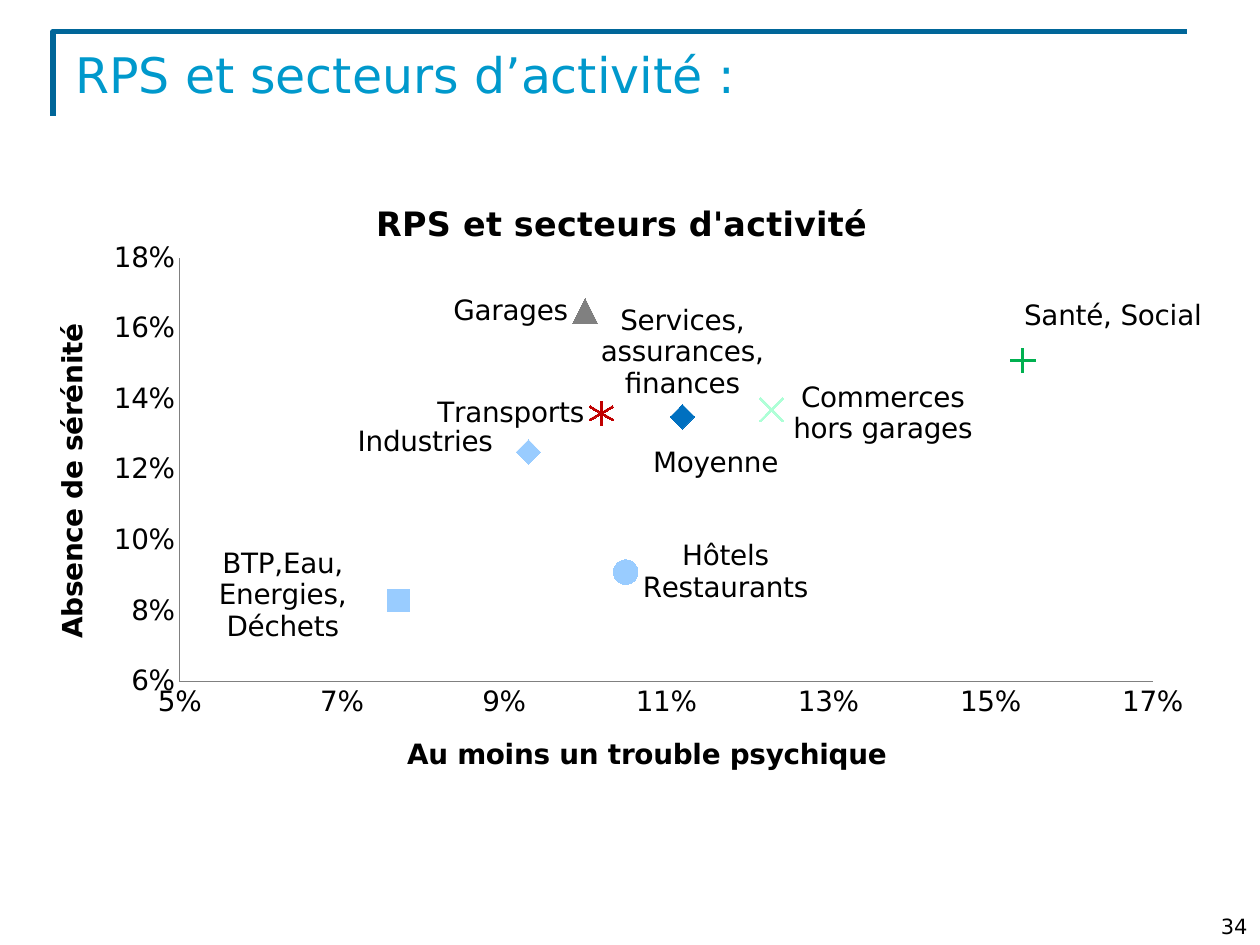
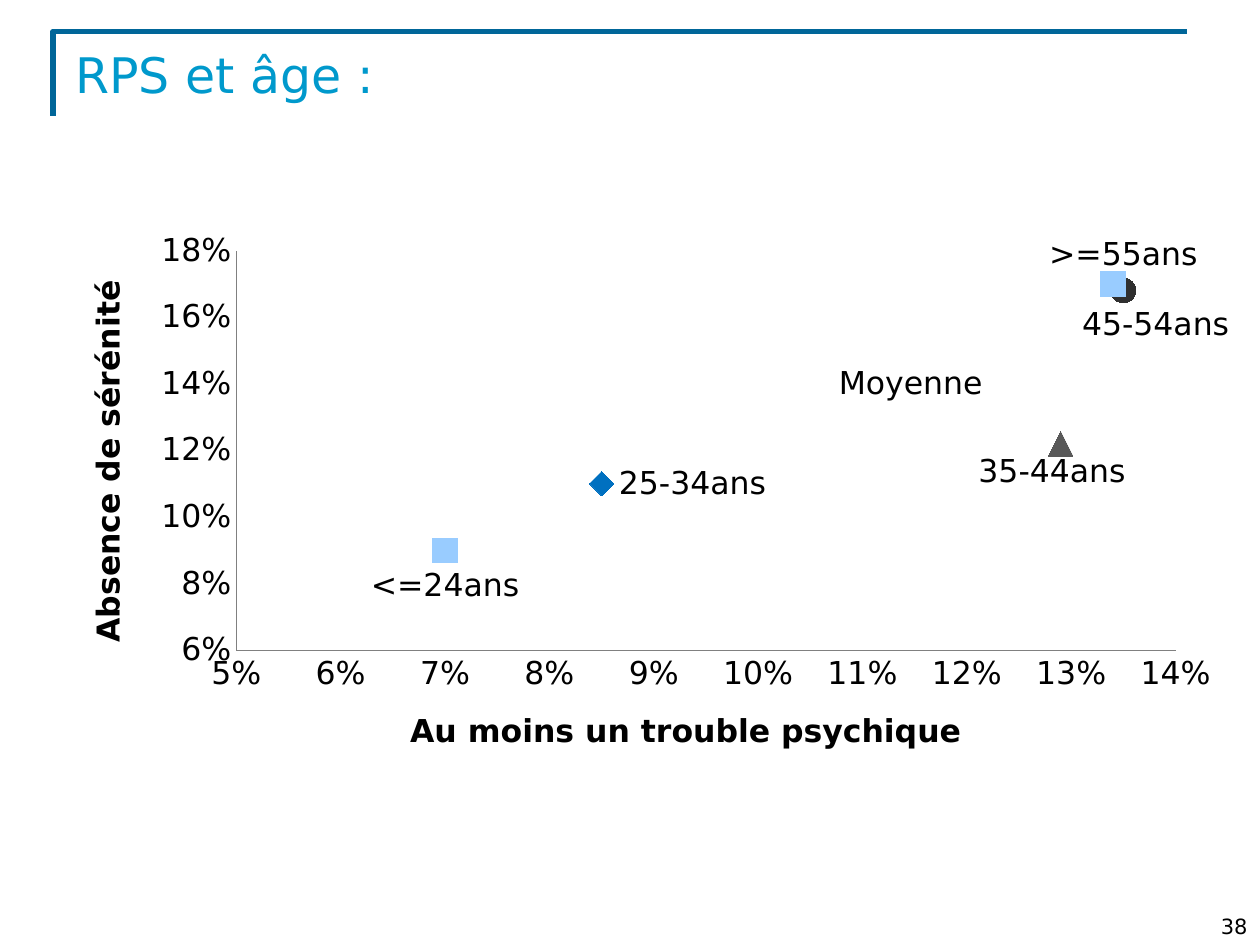
from dataclasses import dataclass

from lxml import etree
from pptx import Presentation, util as u
from pptx.chart.data import XyChartData
from pptx.dml.color import RGBColor
from pptx.enum import chart as ch, text as tx
from pptx.oxml import parse_xml
from pptx.oxml.ns import nsdecls, qn

FONT = "DejaVu Sans"
BLACK, FRAME, TITLE, AXIS = "000000", "006699", "0099CC", "808080"
SKY, BLUE = "99CCFF", "0070C0"
MARKER = ch.XL_MARKER_STYLE
C15 = "http://schemas.microsoft.com/office/drawing/2012/chart"


@dataclass
class Group:
    """One point of a scatter chart; shift moves its label by parts of the chart."""
    name: str
    x: float
    y: float
    marker: MARKER
    color: str = SKY
    size: int = 14
    position: str = "r"
    shift: tuple = ()


def rgb(code):
    return RGBColor.from_string(code)


def write(frame, words, size, color=BLACK, bold=False, align=None):
    paragraph = frame.paragraphs[0]
    paragraph.alignment = align
    run = paragraph.add_run()
    run.text = words
    font = run.font
    font.name, font.size, font.bold = FONT, u.Pt(size), bold
    font.color.rgb = rgb(color)


def layout(x, y, width=None, height=None):
    """Manual chart layout; without a size only the place is set."""
    values = {"x": x, "y": y}
    modes = {}
    if width:
        modes = {"layoutTarget": "inner", "xMode": "edge", "yMode": "edge"}
        values.update(w=width, h=height)
    items = "".join(f'<c:{tag} val="{value}"/>' for tag, value in {**modes, **values}.items())
    return parse_xml(f'<c:layout {nsdecls("c")}><c:manualLayout>{items}</c:manualLayout></c:layout>')


def place_title(title, x, y):
    element = layout(x, y)
    for index, tag in enumerate(("c:xMode", "c:yMode")):
        element[0].insert(index, etree.Element(qn(tag), val="edge"))
    old = title._element.find(qn("c:layout"))
    if old is not None:
        title._element.remove(old)
    title._element.find(qn("c:tx")).addnext(element)


def add_label(series, group):
    """Show the series name beside its point, without a leader line."""
    flags = "".join(f'<c:show{flag} val="{int(flag == "SerName")}"/>' for flag in
                    ("LegendKey", "Val", "CatName", "SerName", "Percent", "BubbleSize"))
    shown = f'<c:dLblPos val="{group.position}"/>{flags}'
    labels = parse_xml(
        f'<c:dLbls {nsdecls("c")}><c:dLbl><c:idx val="0"/>{shown}</c:dLbl>{shown}'
        '<c:showLeaderLines val="0"/>'
        '<c:extLst><c:ext uri="{CE6537A1-D6FC-4f65-9D91-7224C49458BB}">'
        f'<c15:showLeaderLines xmlns:c15="{C15}" val="0"/></c:ext></c:extLst></c:dLbls>')
    if group.shift:
        labels[0].insert(1, layout(*group.shift))
    series._element.find(qn("c:xVal")).addprevious(labels)


class Deck:
    def __init__(self):
        self.presentation = Presentation()
        self.presentation.slide_width = u.Inches(10)
        self.presentation.slide_height = u.Inches(7.5)
        self.slide = None

    def add_slide(self, title, number):
        self.slide = self.presentation.slides.add_slide(self.presentation.slide_layouts[6])
        self.add_frame()
        self.add_text((0.5, 0.3, 9, 1.25), title, size=28, color=TITLE)
        self.add_text((7.67, 7, 2.33, 0.5), str(number), tx.MSO_ANCHOR.BOTTOM,
                      size=12, align=tx.PP_ALIGN.RIGHT)

    def add_frame(self):
        left, top = u.Inches(0.42), u.Inches(0.25)
        builder = self.slide.shapes.build_freeform(left, u.Inches(0.92))
        builder.add_line_segments([(left, top), (u.Inches(9.42), top)], close=False)
        shape = builder.convert_to_shape()
        shape.shadow.inherit = False
        shape.fill.background()
        shape.line.color.rgb = rgb(FRAME)
        shape.line.width = u.Pt(3)

    def add_text(self, box, words, anchor=tx.MSO_ANCHOR.TOP, **style):
        frame = self.slide.shapes.add_textbox(*map(u.Inches, box)).text_frame
        frame.word_wrap = True
        frame.vertical_anchor = anchor
        write(frame, words, **style)

    def add_scatter(self, box, groups, size, plot, x_axis, x_title, y_title, title=None):
        """x_axis is (maximum, step); x_title, y_title are places; title is (words, place)."""
        data = XyChartData(number_format="0%")
        for group in groups:
            data.add_series(group.name).add_data_point(group.x, group.y)
        chart = self.slide.shapes.add_chart(
            ch.XL_CHART_TYPE.XY_SCATTER, *map(u.Inches, box), data).chart
        chart.font.name, chart.font.size = FONT, u.Pt(size)
        chart.font.color.rgb = rgb(BLACK)
        chart.has_legend = False
        chart.has_title = title is not None
        if title:
            write(chart.chart_title.text_frame, title[0], size * 1.2, bold=True)
            place_title(chart.chart_title, *title[1])
        self.style_axis(chart.category_axis, "Au moins un trouble psychique",
                        size, 0.05, *x_axis, x_title)
        self.style_axis(chart.value_axis, "Absence de sérénité",
                        size, 0.06, 0.18, 0.02, y_title)
        chart.plots[0].vary_by_categories = False
        area = chart._chartSpace.chart.plotArea
        for old in area.findall(qn("c:layout")):
            area.remove(old)
        area.insert(0, layout(*plot))
        for series, group in zip(chart.plots[0].series, groups):
            self.style_series(series, group)
            add_label(series, group)

    def style_axis(self, axis, words, size, minimum, maximum, step, place):
        axis.minimum_scale, axis.maximum_scale, axis.major_unit = minimum, maximum, step
        axis.has_major_gridlines = axis.has_minor_gridlines = False
        axis.major_tick_mark = axis.minor_tick_mark = ch.XL_TICK_MARK.NONE
        axis.crosses = ch.XL_AXIS_CROSSES.MINIMUM
        axis.tick_labels.number_format = "0%"
        axis.tick_labels.number_format_is_linked = False
        axis.format.line.color.rgb = rgb(AXIS)
        axis.format.line.width = u.Pt(0.75)
        write(axis.axis_title.text_frame, words, size, bold=True)
        place_title(axis.axis_title, *place)

    def style_series(self, series, group):
        series.format.line.fill.background()
        marker = series.marker
        marker.style = group.marker
        if group.marker != MARKER.NONE:
            marker.size = group.size
            marker.format.fill.solid()
            marker.format.fill.fore_color.rgb = rgb(group.color)
            marker.format.line.color.rgb = rgb(group.color)


SECTORS = [
    Group("BTP,Eau, Energies, Déchets", 0.077, 0.083, MARKER.SQUARE, size=13,
          shift=(-0.171, -0.008)),
    Group("Industries", 0.093, 0.125, MARKER.DIAMOND, shift=(-0.164, -0.016)),
    Group("Garages", 0.1, 0.165, MARKER.TRIANGLE, "808080", position="l"),
    Group("Commerces hors garages", 0.123, 0.137, MARKER.X, "ADFFD6", shift=(0.004, 0.006)),
    Group("Transports", 0.102, 0.136, MARKER.STAR, "C00000", position="l"),
    Group("Hôtels Restaurants", 0.105, 0.091, MARKER.CIRCLE),
    Group("Santé, Social", 0.154, 0.151, MARKER.PLUS, "00B050", shift=(-0.014, -0.069)),
    Group("Services, assurances, finances", 0.112, 0.135, MARKER.DIAMOND, BLUE, position="t"),
    Group("Moyenne", 0.113, 0.13, MARKER.NONE, shift=(-0.037, 0.045)),
]
AGES = [
    Group("<=24ans", 0.07, 0.09, MARKER.SQUARE, position="b"),
    Group("25-34ans", 0.085, 0.11, MARKER.DIAMOND, BLUE),
    Group("35-44ans", 0.129, 0.122, MARKER.TRIANGLE, "595959", position="l",
          shift=(0.07, 0.047)),
    Group("45-54ans", 0.134, 0.17, MARKER.SQUARE, shift=(-0.041, 0.068)),
    Group(">=55ans", 0.135, 0.168, MARKER.CIRCLE, "303030", position="t"),
    Group("Moyenne", 0.113, 0.13, MARKER.NONE, shift=(-0.051, -0.055)),
]


def main():
    deck = Deck()
    deck.add_slide("RPS et secteurs d’activité :", 34)
    deck.add_scatter((0.39, 1.39, 9.15, 5.09), SECTORS, 16, (0.114, 0.129, 0.849, 0.661),
                     x_axis=(0.17, 0.02), x_title=(0.308, 0.867), y_title=(0, 0.221),
                     title=("RPS et secteurs d'activité", (0.28, 0.031)))
    deck.add_slide("RPS et âge :", 38)
    deck.add_scatter((0.43, 1.37, 9.33, 4.8), AGES, 18, (0.155, 0.129, 0.799, 0.661),
                     x_axis=(0.14, 0.01), x_title=(0.298, 0.878), y_title=(0.023, 0.169))
    deck.presentation.save("out.pptx")


if __name__ == "__main__":
    main()
